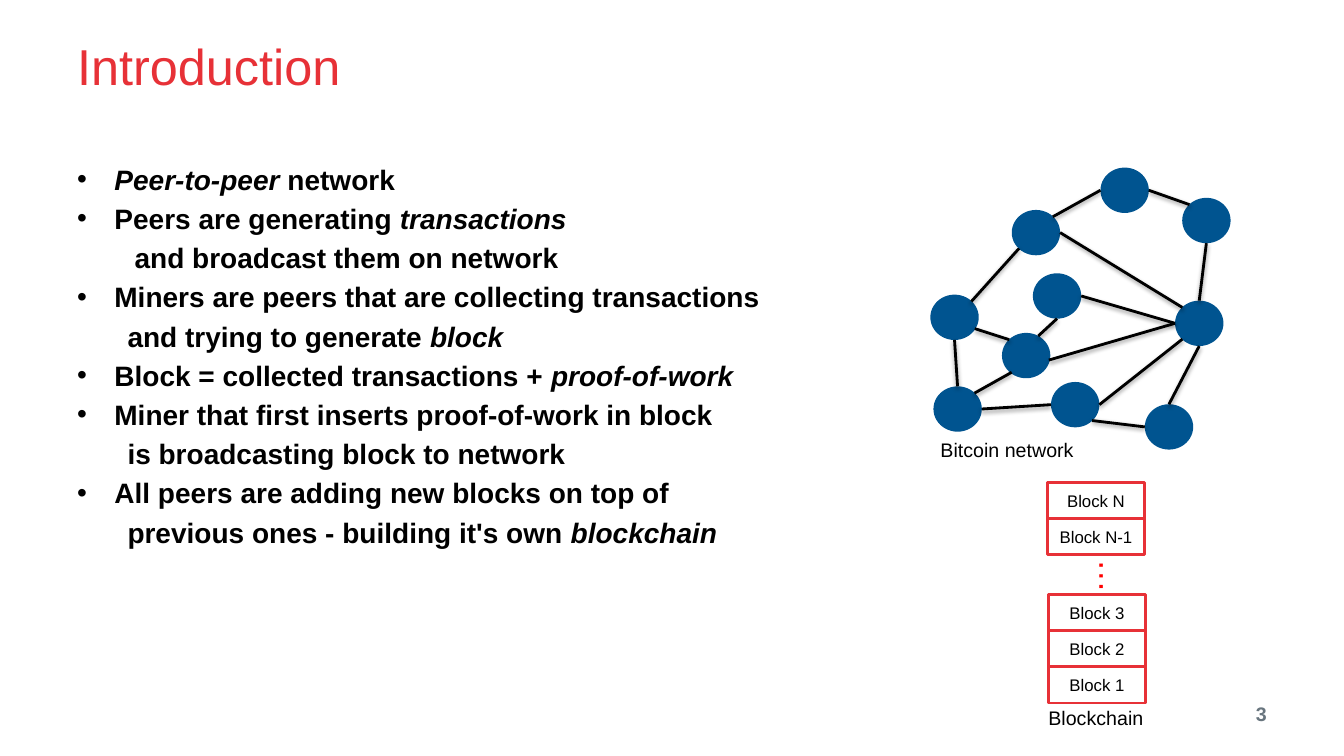
from lxml import etree
from pptx import Presentation
from pptx.dml.color import RGBColor
from pptx.enum.shapes import MSO_CONNECTOR, MSO_SHAPE
from pptx.enum.text import MSO_ANCHOR as ANCHOR, PP_ALIGN as ALIGN
from pptx.oxml import parse_xml
from pptx.oxml.ns import nsdecls, qn
from pptx.util import Emu, Inches, Pt

W, H = Inches(13.33), Inches(7.5)
RED, BLUE, BLACK, WHITE, GREY = "E73137", "005490", "000000", "FFFFFF", "68757E"
NODE_W, NODE_H = 3.6, 6
BLOCK_W, BLOCK_H = 7.24, 4.8

PEERS = {
    "upper": (75.28, 27.77), "southwest": (69.45, 51.1),
    "inner": (76.85, 36.15), "west": (69.22, 38.97),
    "middle": (74.55, 44.03), "south": (78.2, 50.53),
    "top": (81.88, 22.17), "east": (87.96, 26.17),
    "southeast": (85.18, 53.47), "hub": (87.43, 39.77),
}
SITES = {
    "t": (0.5, 0), "b": (0.5, 1), "l": (0, 0.5), "r": (1, 0.5),
    "tl": (0.15, 0.15), "tr": (0.85, 0.15),
    "bl": (0.15, 0.85), "br": (0.85, 0.85),
    "upper right": (0.75, 0.07), "mid right": (0.97, 0.6),
    "lower right": (0.92, 0.75), "lower left": (0.2, 0.87),
}
LINKS = [
    ("upper", "r", "hub", "tl"), ("inner", "r", "hub", "l"),
    ("middle", "mid right", "hub", "l"), ("south", "r", "hub", "bl"),
    ("west", "tr", "upper", "bl"), ("west", "b", "southwest", "t"),
    ("southwest", "r", "south", "l"),
    ("middle", "lower left", "southwest", "tr"),
    ("inner", "b", "middle", "upper right"),
    ("west", "lower right", "middle", "tl"),
    ("upper", "tr", "top", "l"), ("east", "tl", "top", "r"),
    ("hub", "b", "southeast", "t"), ("hub", "t", "east", "b"),
    ("southeast", "l", "south", "br"),
]
BLOCK_STACKS = [(77.93, 63.8, ["Block N", "Block N-1"]),
                (78, 78.6, ["Block 3", "Block 2", "Block 1"])]

BULLET, TURN, WIDE_TURN = 0.37, 0.5, 0.57
POINTS = [
    (BULLET, [("Peer-to-peer", True), (" network", False)]),
    (BULLET, [("Peers are generating ", False), ("transactions", True)]),
    (WIDE_TURN, [("and broadcast them on network", False)]),
    (BULLET, [("Miners are peers that are collecting transactions", False)]),
    (TURN, [("and trying to generate ", False), ("block", True)]),
    (BULLET, [("Block = collected transactions + ", False), ("proof-of-work", True)]),
    (BULLET, [("Miner that first inserts proof-of-work in block", False)]),
    (TURN, [("is broadcasting block to network", False)]),
    (BULLET, [("All peers are adding new blocks on top of", False)]),
    (TURN, [("previous ones - building it's own ", False), ("blockchain", True)]),
]
SHADOW = (f'<a:effectLst {nsdecls("a")}><a:outerShdw blurRad="40000" dist="20000" '
          'dir="5400000" rotWithShape="0"><a:srgbClr val="000000">'
          '<a:alpha val="38000"/></a:srgbClr></a:outerShdw></a:effectLst>')


def rgb(value):
    return RGBColor.from_string(value)


def px(share):
    return Emu(round(W * share / 100))


def py(share):
    return Emu(round(H * share / 100))


def box(x, y, w, h):
    return px(x), py(y), px(w), py(h)


def set_font(font, color, **formats):
    font.color.rgb = rgb(color)
    for name, value in {"name": "Arial", **formats}.items():
        setattr(font, name, value)


def add_text(shapes, place, text, size, color=BLACK, align=ALIGN.LEFT,
             anchor=ANCHOR.TOP, bold=False):
    sp = shapes.add_textbox(*box(*place))
    tf = sp.text_frame
    tf.word_wrap = True
    tf.vertical_anchor = anchor
    p = tf.paragraphs[0]
    p.alignment = align
    r = p.add_run()
    r.text = text
    set_font(r.font, color, size=Pt(size), bold=bold)
    return sp


def add_points(shapes, place):
    tf = shapes.add_textbox(*box(*place)).text_frame
    tf.word_wrap = True
    for i, (indent, runs) in enumerate(POINTS):
        p = tf.add_paragraph() if i else tf.paragraphs[0]
        pPr = p._p.get_or_add_pPr()
        pPr.set("marL", str(Inches(indent)))
        if indent == BULLET:
            pPr.set("indent", str(-Inches(indent)))
            etree.SubElement(pPr, qn("a:buFont")).set("typeface", "Arial")
            etree.SubElement(pPr, qn("a:buChar")).set("char", "•")
        if i:
            p.space_before = Pt(4)
        for text, italic in runs:
            r = p.add_run()
            r.text = text
            set_font(r.font, BLACK, size=Pt(20), bold=True, italic=italic)


def add_solid(shapes, kind, place, fill):
    sp = shapes.add_shape(kind, *box(*place))
    sp.shadow.inherit = False
    sp.fill.solid()
    sp.fill.fore_color.rgb = rgb(fill)
    sp.line.fill.background()
    return sp


def add_block(shapes, x, y, label):
    sp = add_solid(shapes, MSO_SHAPE.RECTANGLE, (x, y, BLOCK_W, BLOCK_H), WHITE)
    sp.line.color.rgb = rgb(RED)
    sp.line.width = Pt(2)
    tf = sp.text_frame
    formats = {"margin_left": 0, "margin_right": 0, "margin_top": 0,
               "margin_bottom": 0, "vertical_anchor": ANCHOR.MIDDLE}
    for name, value in formats.items():
        setattr(tf, name, value)
    p = tf.paragraphs[0]
    p.alignment = ALIGN.CENTER
    r = p.add_run()
    r.text = label
    set_font(r.font, BLACK, size=Pt(12))


def site(peer, side):
    (x, y), (dx, dy) = PEERS[peer], SITES[side]
    return px(x + dx * NODE_W), py(y + dy * NODE_H)


def add_link(shapes, start, start_side, end, end_side):
    line = shapes.add_connector(MSO_CONNECTOR.STRAIGHT, *site(start, start_side),
                                *site(end, end_side))
    line.line.color.rgb = rgb(BLACK)
    line.line.width = Pt(2)
    line._element.spPr.append(parse_xml(SHADOW))


def add_network(s):
    shapes = s.shapes.add_group_shape().shapes
    for x, y in PEERS.values():
        add_solid(shapes, MSO_SHAPE.OVAL, (x, y, NODE_W, NODE_H), BLUE)
    for link in LINKS:
        add_link(shapes, *link)


def add_blockchain(s):
    shapes = s.shapes.add_group_shape().shapes
    for x, top, labels in BLOCK_STACKS:
        for i, label in enumerate(labels):
            add_block(shapes, x, top + i * BLOCK_H, label)
    dots = add_text(shapes, (80.57, 71.73, 3.53, 8.27), "…", 24, "FF0000")
    dots.text_frame.margin_right = 0
    dots.rotation = 90


def main():
    prs = Presentation()
    prs.slide_width, prs.slide_height = W, H
    s = prs.slides.add_slide(prs.slide_layouts[6])
    add_text(s.shapes, (88.1, 91.73, 6.9, 5.47), "3", 14, GREY,
             ALIGN.RIGHT, ANCHOR.MIDDLE, True)
    add_text(s.shapes, (5, 4, 76.74, 15.2), "Introduction", 36, RED)
    add_points(s.shapes, (5, 20.8, 90, 68.53))
    add_network(s)
    add_blockchain(s)
    add_text(s.shapes, (69.24, 57.2, 15.3, 4.53), "Bitcoin network", 14)
    add_text(s.shapes, (77.27, 92.67, 15.3, 4.53), "Blockchain", 14)
    prs.save("out.pptx")


if __name__ == "__main__":
    main()
